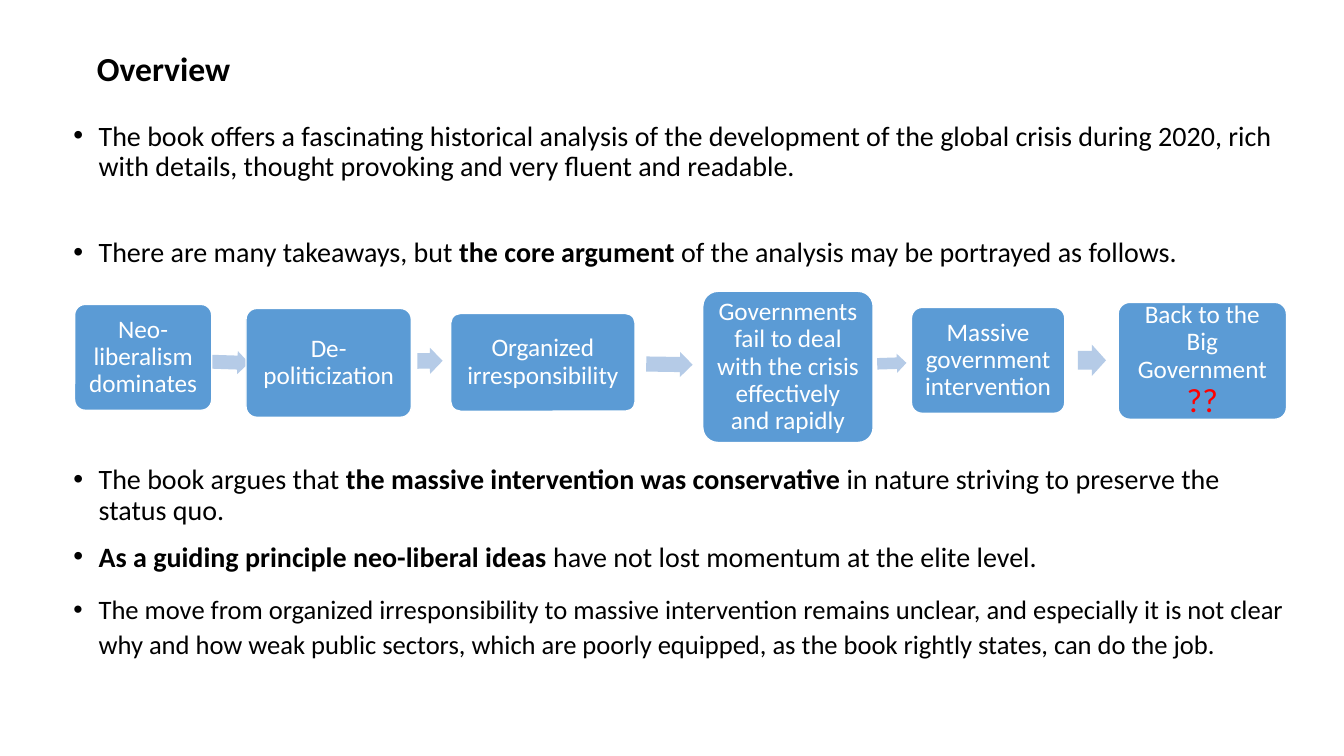
import pptx
import pptx.util
import pptx.dml.color
import pptx.enum.shapes
import pptx.enum.text
from dataclasses import dataclass
from lxml import etree
from pptx.util import Inches


@dataclass(frozen=True)
class Theme:
    font: str = "Calibri"
    ink: str = "000000"
    light: str = "FFFFFF"
    stage: str = "5B9BD5"
    arrow: str = "B5CBE7"
    doubt: str = "FF0000"
    title: int = 24
    body: int = 20
    closing: int = 19
    label: int = 18


THEME = Theme()
SHAPES = pptx.enum.shapes.MSO_SHAPE
ALIGN = pptx.enum.text.PP_ALIGN
MIDDLE = pptx.enum.text.MSO_ANCHOR.MIDDLE
NO_FIT = pptx.enum.text.MSO_AUTO_SIZE.NONE

OPENING = [
    (0, 0.9, [("The book offers a fascinating historical analysis of the development of the global crisis "
               "during 2020, rich with details, thought provoking and very fluent and readable.",
               THEME.body, False)]),
    (40, 0.9, [("There are many takeaways, but ", THEME.body, False),
               ("the core argument ", THEME.body, True),
               ("of the analysis may be portrayed as follows.", THEME.body, False)]),
]
CONCLUSIONS = [
    (0, 0.9, [("The book argues that ", THEME.body, False),
              ("the massive intervention was conservative ", THEME.body, True),
              ("in nature striving to preserve the status quo.", THEME.body, False)]),
    (12, 0.9, [("As a guiding principle neo-liberal ideas ", THEME.body, True),
               ("have not lost momentum at the elite level.", THEME.body, False)]),
    (12, 1.1, [("The move from organized irresponsibility to massive intervention remains unclear, and "
                "especially it is not clear why and how weak public sectors, which are poorly equipped, "
                "as the book rightly states, can do the job.", THEME.closing, False)]),
]
STAGES = [
    ("Neo-liberalism dominates", (0.74, 3.02, 1.36, 1.05)),
    ("De-politicization", (2.44, 3.06, 1.64, 1.08)),
    ("Organized irresponsibility", (4.47, 3.11, 1.83, 0.97)),
    ("Governments fail to deal with the crisis effectively and rapidly", (6.97, 2.89, 1.69, 1.5)),
    ("Massive government intervention", (9.04, 3.05, 1.52, 1.05)),
    ("Back to the Big Government ", (11.09, 3, 1.67, 1.16)),
]
ARROWS = [
    ((2.1, 3.48, 0.37, 0.23), 1.9),
    ((4.14, 3.45, 0.25, 0.26), -0.1),
    ((6.41, 3.49, 0.46, 0.25), 0.9),
    ((8.7, 3.51, 0.29, 0.19), -1.8),
    ((10.69, 3.42, 0.28, 0.31), 0.1),
]


def rgb(color):
    return pptx.dml.color.RGBColor.from_string(color)


def apply(target, values):
    for name, value in values.items():
        setattr(target, name, value)


def add_run(paragraph, words, size, color, bold=False):
    run = paragraph.add_run()
    run.text = words
    apply(run.font, {"name": THEME.font, "size": pptx.util.Pt(size), "bold": bold})
    run.font.color.rgb = rgb(color)


def set_title(slide, words):
    title = slide.shapes.title
    apply(title, {"left": Inches(0.86), "top": Inches(0.38),
                  "width": Inches(11.5), "height": Inches(0.64)})
    apply(title.text_frame, {"auto_size": NO_FIT, "vertical_anchor": MIDDLE, "word_wrap": True})
    heading = title.text_frame.paragraphs[0]
    apply(heading, {"alignment": ALIGN.LEFT, "line_spacing": 0.9})
    add_run(heading, words, THEME.title, THEME.ink, True)


def set_bullet(paragraph):
    properties = paragraph._p.get_or_add_pPr()
    properties.set("marL", str(Inches(0.25)))
    properties.set("indent", str(Inches(-0.25)))
    namespace = properties.nsmap["a"]
    etree.SubElement(properties, f"{{{namespace}}}buFont", typeface="Arial")
    etree.SubElement(properties, f"{{{namespace}}}buChar", char="•")


def add_bullets(slide, top, height, points):
    frame = slide.shapes.add_textbox(Inches(0.63), Inches(top), Inches(12.3), Inches(height)).text_frame
    frame.word_wrap = True
    for index, (space, spacing, runs) in enumerate(points):
        point = frame.add_paragraph() if index else frame.paragraphs[0]
        apply(point, {"space_before": pptx.util.Pt(space), "line_spacing": spacing})
        set_bullet(point)
        for words, size, bold in runs:
            add_run(point, words, size, THEME.ink, bold)


def add_block(slide, preset, place, color, adjustments):
    block = slide.shapes.add_shape(preset, *map(Inches, place))
    block.shadow.inherit = False
    block.fill.solid()
    block.fill.fore_color.rgb = rgb(color)
    block.line.fill.background()
    for index, value in enumerate(adjustments):
        block.adjustments[index] = value
    return block


def add_stage(slide, words, place):
    stage = add_block(slide, SHAPES.ROUNDED_RECTANGLE, place, THEME.stage, [0.1])
    stage.line.color.rgb = rgb(THEME.light)
    stage.line.width = pptx.util.Pt(1)
    frame = stage.text_frame
    apply(frame, {"word_wrap": True, "vertical_anchor": MIDDLE})
    apply(frame, {f"margin_{side}": Inches(0.07) for side in ("left", "right", "top", "bottom")})
    label = frame.paragraphs[0]
    apply(label, {"alignment": ALIGN.CENTER, "line_spacing": 0.9})
    add_run(label, words, THEME.label, THEME.light)
    return label


def add_arrow(slide, place, turn):
    arrow = add_block(slide, SHAPES.RIGHT_ARROW, place, THEME.arrow, [0.6, 0.5])
    arrow.rotation = turn


def main():
    deck = pptx.Presentation()
    apply(deck, {"slide_width": Inches(13.33), "slide_height": Inches(7.5)})
    slide = deck.slides.add_slide(deck.slide_layouts[5])
    set_title(slide, "Overview")
    add_bullets(slide, 1.16, 1.6, OPENING)
    for place, turn in ARROWS:
        add_arrow(slide, place, turn)
    for words, place in STAGES:
        last_label = add_stage(slide, words, place)
    add_run(last_label, "??", THEME.title, THEME.doubt)
    add_bullets(slide, 4.57, 2.2, CONCLUSIONS)
    deck.save("out.pptx")


if __name__ == "__main__":
    main()
